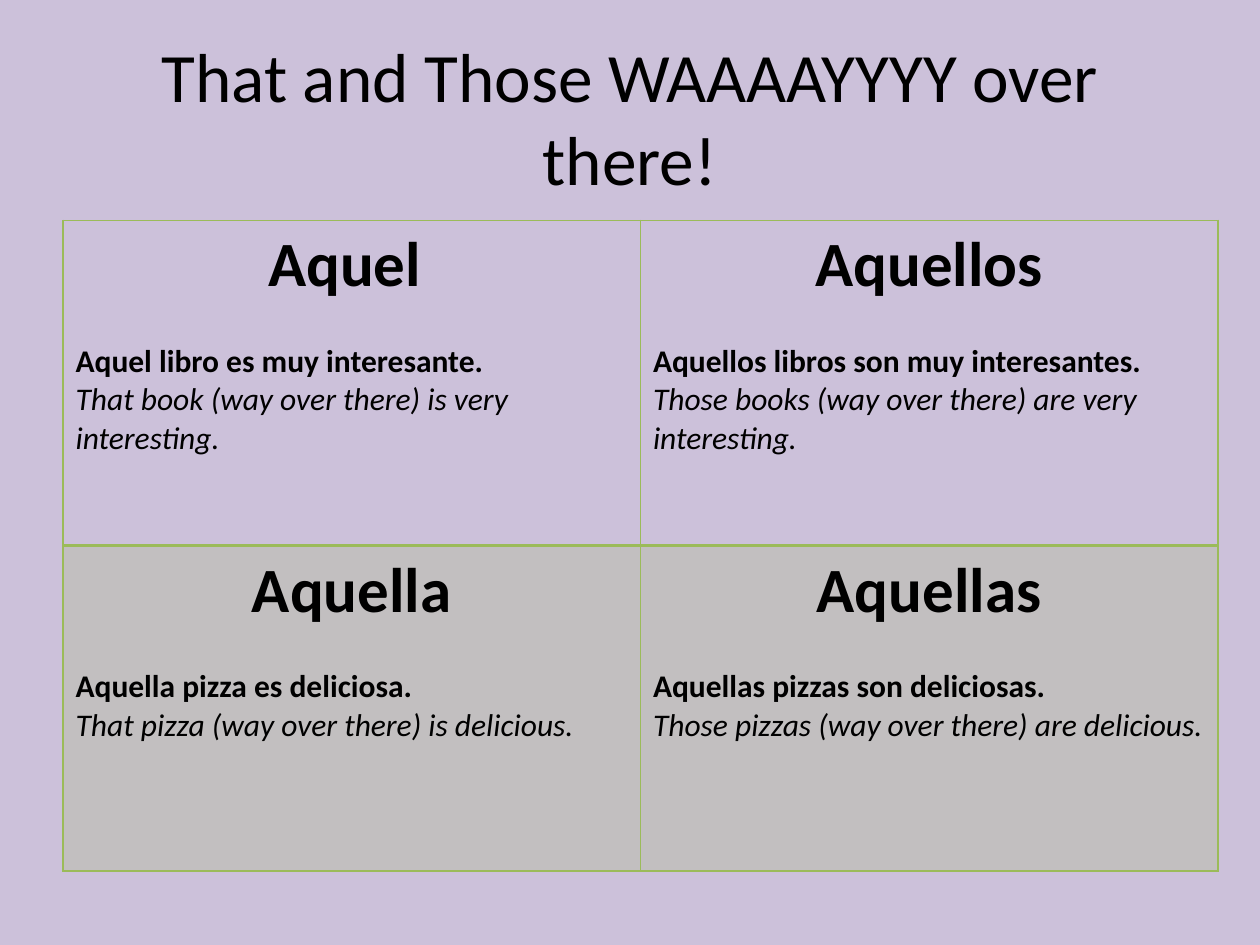
import pptx
import pptx.util
import pptx.dml.color
import pptx.enum.text
import pptx.oxml
import pptx.oxml.ns

Cm, Pt = pptx.util.Cm, pptx.util.Pt
RGB = pptx.dml.color.RGBColor
Align = pptx.enum.text.PP_ALIGN
Anchor = pptx.enum.text.MSO_ANCHOR
qn = pptx.oxml.ns.qn

LILAC = RGB(0xCC, 0xC1, 0xDA)
GREEN = RGB(0x9B, 0xBB, 0x59)
BLACK = RGB(0, 0, 0)

TITLE = "That and Those WAAAAYYYY over there!"
# Each cell: word, Spanish example, English meaning
WORDS = [
    [("Aquel ", "Aquel libro es muy interesante.",
      "That book (way over there) is very interesting."),
     ("Aquellos", "Aquellos libros son muy interesantes.",
      "Those books (way over there) are very interesting.")],
    [("Aquella", "Aquella pizza es deliciosa.",
      "That pizza (way over there) is delicious."),
     ("Aquellas", "Aquellas pizzas son deliciosas.",
      "Those pizzas (way over there) are delicious.")],
]

BASE = {"name": "Calibri", "bold": False, "italic": False}
HEAD = {**BASE, "size": Pt(36), "bold": True}
LINE = {**BASE, "size": Pt(18), "bold": True}
GLOSS = {**BASE, "size": Pt(18), "italic": True}
# Font, alignment and space after for the three lines of a cell
LOOKS = [(HEAD, Align.CENTER, Pt(22)),
         (LINE, Align.LEFT, Pt(0)),
         (GLOSS, Align.LEFT, Pt(0))]


def write(para, text, form, align):
    run = para.add_run()
    run.text = text
    para.alignment = align
    for key, val in form.items():
        setattr(run.font, key, val)
    run.font.color.rgb = BLACK


def add_title(slide, left, top, width, height):
    title = slide.shapes.title
    box = {"left": left, "top": top, "width": width, "height": height}
    for key, val in box.items():
        setattr(title, key, val)
    frame = title.text_frame
    frame.word_wrap = True
    frame.auto_size = pptx.enum.text.MSO_AUTO_SIZE.NONE
    frame.vertical_anchor = Anchor.MIDDLE
    write(frame.paragraphs[0], TITLE, {**BASE, "size": Pt(39.6)}, Align.CENTER)


def paint(cell, tint):
    if not tint:
        cell.fill.background()
        return
    cell.fill.solid()
    cell.fill.fore_color.rgb = GREEN
    color = next(cell._tc.tcPr.iter(qn("a:srgbClr")))
    color.append(pptx.oxml.parse_xml(
        f'<a:alpha {pptx.oxml.ns.nsdecls("a")} val="20000"/>'))


def edge(cell, sides):
    for spot, (side, size) in enumerate(sides.items()):
        cell._tc.tcPr.insert(spot, pptx.oxml.parse_xml(
            f'<a:ln{side} {pptx.oxml.ns.nsdecls("a")} w="{Pt(size)}">'
            f'<a:solidFill><a:srgbClr val="{GREEN}"/></a:solidFill></a:ln{side}>'))


def add_grid(slide, left, top, width, height):
    rows, cols = len(WORDS), len(WORDS[0])
    table = slide.shapes.add_table(rows, cols, left, top, width, height).table
    table.first_row = table.horz_banding = False
    for r, row in enumerate(WORDS):
        for c, texts in enumerate(row):
            cell = table.cell(r, c)
            frame = cell.text_frame
            for i, (text, (form, align, gap)) in enumerate(zip(texts, LOOKS)):
                para = frame.add_paragraph() if i else frame.paragraphs[0]
                write(para, text, form, align)
                para.space_after = gap
            paint(cell, tint=r > 0)
            # The rule between the rows is twice as thick
            edge(cell, {"L": 1, "R": 1, "T": 2 if r else 1,
                        "B": 1 if r == rows - 1 else 2})


def main():
    deck = pptx.Presentation()
    deck.slide_width, deck.slide_height = Cm(25.4), Cm(19.05)
    slide = deck.slides.add_slide(deck.slide_layouts[5])
    # Background
    slide.background.fill.solid()
    slide.background.fill.fore_color.rgb = LILAC
    # Title and table share the left edge
    left = Cm(1.27)
    add_title(slide, left, Cm(0.76), Cm(22.86), Cm(3.18))
    add_grid(slide, left, Cm(4.44), Cm(23.28), Cm(13.12))
    deck.save("out.pptx")


if __name__ == "__main__":
    main()
